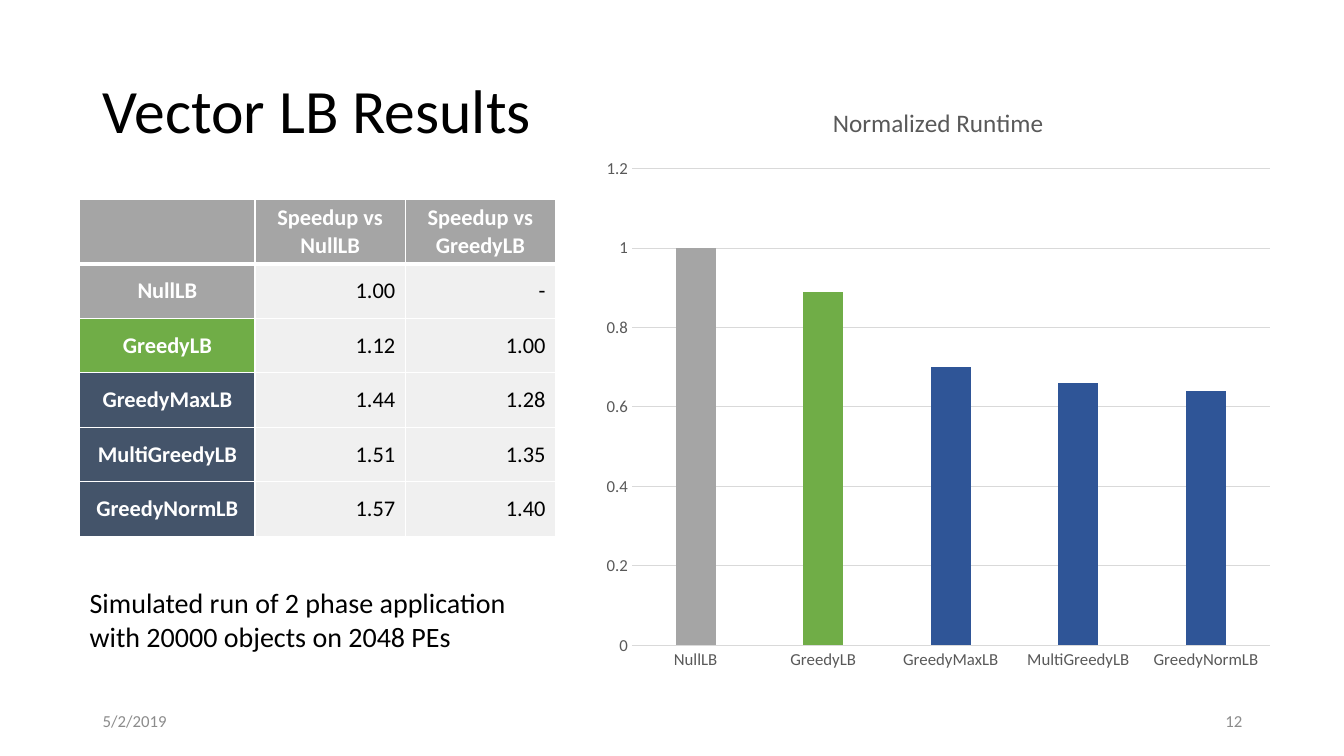
"""Build the Vector LB Results slide with a speedup table and a runtime chart."""
from lxml.etree import SubElement
from pptx import Presentation
from pptx.chart.data import CategoryChartData
from pptx.dml.color import RGBColor
from pptx.enum.chart import XL_CHART_TYPE, XL_TICK_MARK
from pptx.enum.text import MSO_ANCHOR, PP_ALIGN
from pptx.oxml.ns import qn
from pptx.util import Inches, Pt

GRAY, GREEN, BLUE, SLATE = "A5A5A5", "70AD47", "2F5597", "44546A"
BLACK, WHITE, MUTED, TEXT_GRAY, GRID = "000000", "FFFFFF", "8C8C8C", "595959", "D9D9D9"


def color(value):
    return RGBColor.from_string(value)


def style(font, size, value, bold=False):
    font.name = "Calibri"
    font.size = Pt(size)
    font.bold = bold
    font.color.rgb = color(value)


deck = Presentation()
deck.slide_width, deck.slide_height = Inches(13.33), Inches(7.5)
page = deck.slides.add_slide(deck.slide_layouts[5])

title = page.shapes.title
title.left, title.top = Inches(0.92), Inches(0.4)
title.width, title.height = Inches(11.5), Inches(1.45)
title.text_frame.text = "Vector LB Results"
title.text_frame.vertical_anchor = MSO_ANCHOR.MIDDLE
para = title.text_frame.paragraphs[0]
para.alignment = PP_ALIGN.LEFT
para.line_spacing = 0.9
style(para.font, 44, BLACK)

texts = [
    ("5/2/2019", 0.92, 6.95, 3, 0.4, 12, MUTED, PP_ALIGN.LEFT, MSO_ANCHOR.MIDDLE),
    ("12", 9.42, 6.95, 3, 0.4, 12, MUTED, PP_ALIGN.RIGHT, MSO_ANCHOR.MIDDLE),
    ("Simulated run of 2 phase application with 20000 objects on 2048 PEs",
     0.79, 5.76, 4.72, 0.77, 20, BLACK, PP_ALIGN.LEFT, MSO_ANCHOR.TOP),
]
for text, left, top, width, height, size, value, alignment, anchor in texts:
    box = page.shapes.add_textbox(Inches(left), Inches(top), Inches(width), Inches(height))
    frame = box.text_frame
    frame.word_wrap = True
    frame.vertical_anchor = anchor
    frame.text = text
    frame.paragraphs[0].alignment = alignment
    style(frame.paragraphs[0].font, size, value)

balancers = ["NullLB", "GreedyLB", "GreedyMaxLB", "MultiGreedyLB", "GreedyNormLB"]
data = CategoryChartData()
data.categories = balancers
data.add_series("Series 1", [1, 0.89, 0.7, 0.66, 0.64])
chart = page.shapes.add_chart(XL_CHART_TYPE.COLUMN_CLUSTERED, Inches(5.88), Inches(0.83),
                              Inches(6.85), Inches(5.93), data).chart
style(chart.font, 10, BLACK)
chart.has_legend = False
chart.has_title = True
chart.chart_title.include_in_layout = False
chart.chart_title.text_frame.text = "Normalized Runtime"
style(chart.chart_title.text_frame.paragraphs[0].font, 18, TEXT_GRAY)
for axis in (chart.category_axis, chart.value_axis):
    axis.major_tick_mark = axis.minor_tick_mark = XL_TICK_MARK.NONE
    style(axis.tick_labels.font, 12, TEXT_GRAY)
chart.value_axis.minimum_scale = 0
chart.value_axis.maximum_scale = 1.2
chart.value_axis.major_unit = 0.2
chart.value_axis.format.line.fill.background()
for line in (chart.category_axis.format.line, chart.value_axis.major_gridlines.format.line):
    line.color.rgb = color(GRID)
    line.width = Pt(0.75)
plot = chart.plots[0]
plot.gap_width, plot.overlap = 219, -27
plot.vary_by_categories = False
for index, value in enumerate([GRAY, GREEN, BLUE, BLUE, BLUE]):
    fill = plot.series[0].points[index].format.fill
    fill.solid()
    fill.fore_color.rgb = color(value)

speedups = [("1.00", "-"), ("1.12", "1.00"), ("1.44", "1.28"), ("1.51", "1.35"), ("1.57", "1.40")]
rows = [("", "Speedup vs NullLB", "Speedup vs GreedyLB")]
rows += [(name, *values) for name, values in zip(balancers, speedups)]
row_fills = [GRAY, GRAY, GREEN, SLATE, SLATE, SLATE]
table = page.shapes.add_table(6, 3, Inches(0.79), Inches(1.98), Inches(4.72), Inches(3.35)).table
for column, width in zip(table.columns, (1.74, 1.49, 1.49)):
    column.width = Inches(width)
for row_index, row in enumerate(rows):
    table.rows[row_index].height = Inches(0.54 if row_index else 0.64)
    for column_index, text in enumerate(row):
        heading = row_index == 0 or column_index == 0
        cell = table.cell(row_index, column_index)
        cell.text = text
        cell.vertical_anchor = MSO_ANCHOR.MIDDLE
        para = cell.text_frame.paragraphs[0]
        para.alignment = PP_ALIGN.CENTER if heading else PP_ALIGN.RIGHT
        style(para.font, 16, WHITE if heading else BLACK, heading)
        properties = cell._tc.get_or_add_tcPr()
        for side in ("lnL", "lnR", "lnT", "lnB"):
            thick = (row_index, side) in ((0, "lnB"), (1, "lnT"))
            border = SubElement(properties, qn(f"a:{side}"), w=str(Pt(3 if thick else 1)))
            SubElement(SubElement(border, qn("a:solidFill")), qn("a:srgbClr"), val=WHITE)
        cell.fill.solid()
        cell.fill.fore_color.rgb = color(row_fills[row_index] if heading else "F0F0F0")

deck.save("out.pptx")
